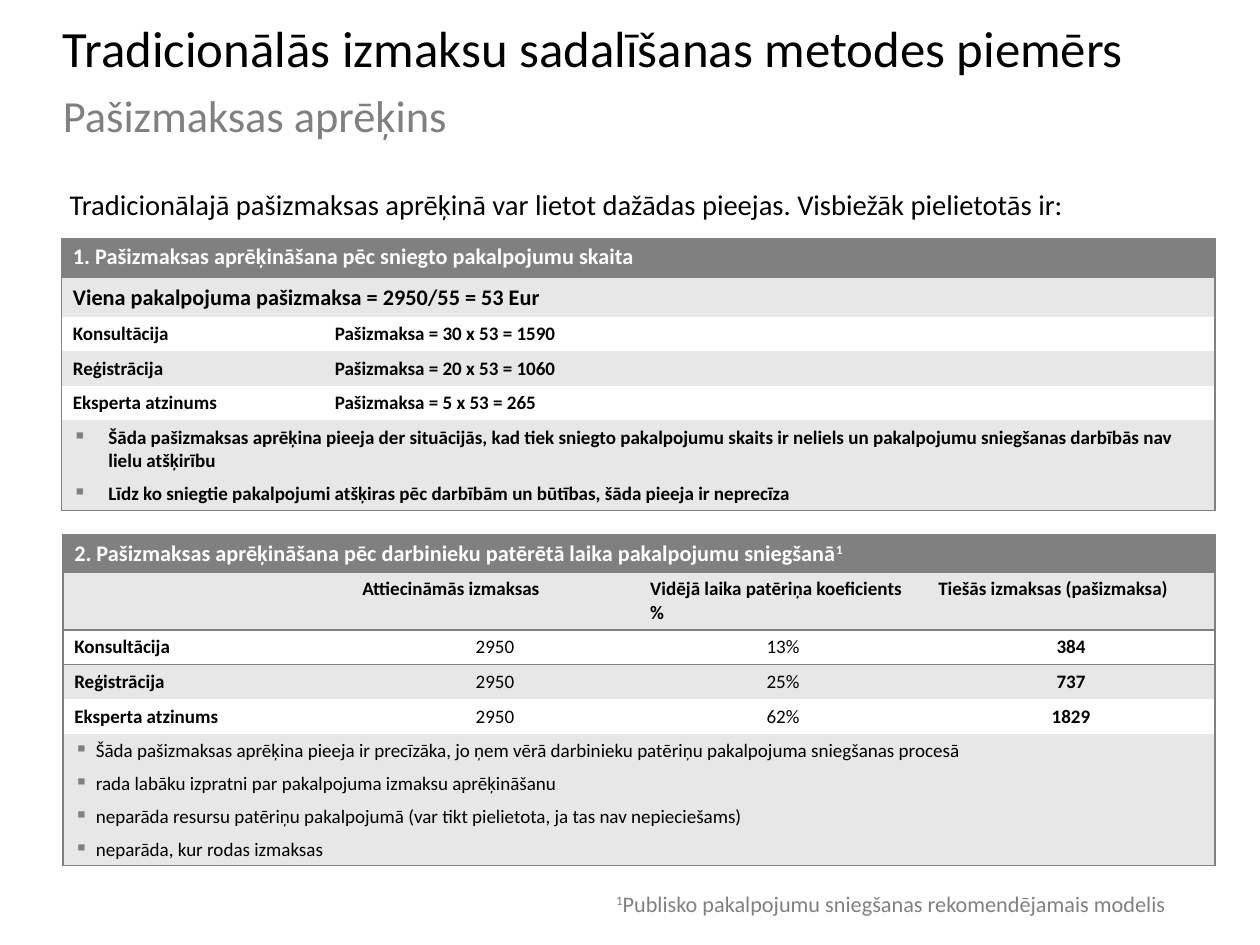
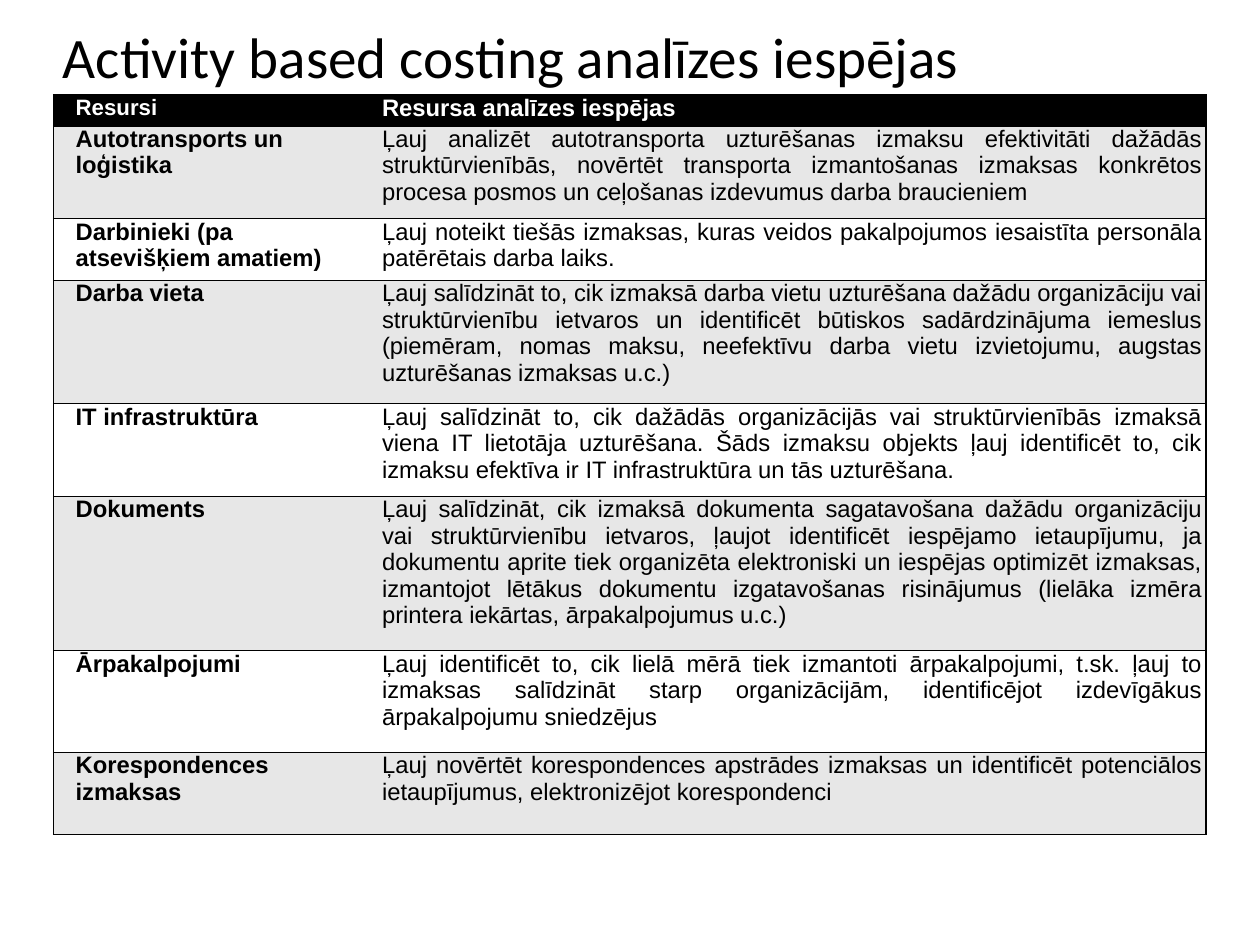
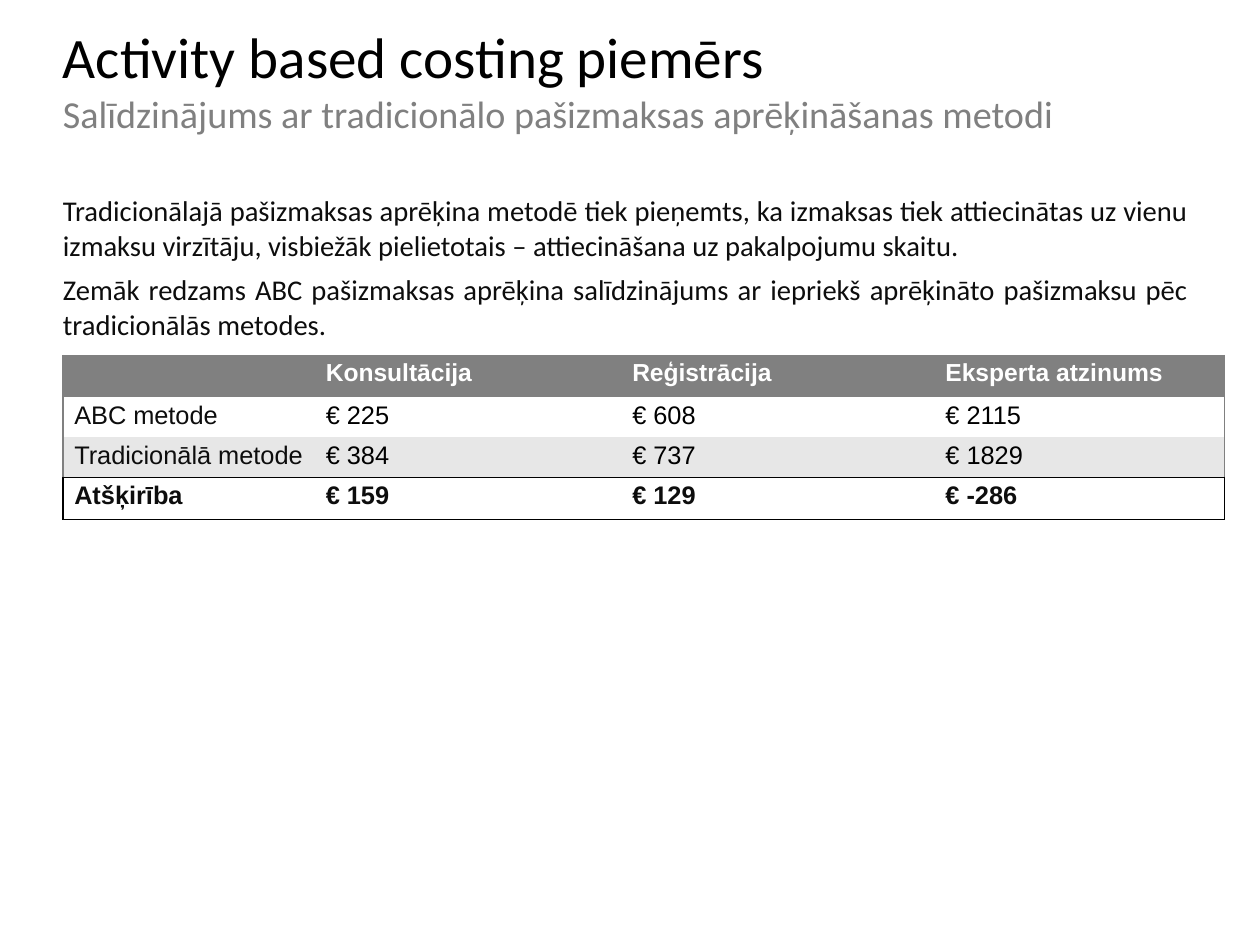
from dataclasses import dataclass, replace

from lxml import etree
from pptx import Presentation
from pptx import util as u
from pptx.dml import color as dml
from pptx.enum import text
from pptx.oxml import ns

COLORS = {
    "black": "000000",
    "ink": "0D0D0D",
    "gray": "808080",
    "band": "E7E7E7",
    "white": "FFFFFF",
}
PLAIN_TABLE = "{2D5ABB26-0587-4C30-8999-92F81FD0307C}"
LEFT = 1.4  # common left edge, cm
INSET = (0.25, 0.13, 0.25, 0.13)  # left, top, right, bottom, cm
NO_INSET = (0, 0, 0, 0)


@dataclass
class Style:
    size: float
    color: str = "black"
    bold: bool = False
    font: str = "Calibri"
    align: str = "LEFT"
    anchor: str = "TOP"
    leading: float = 1.0
    gap: float = 0  # points between paragraphs
    indent: float = 0  # cm
    bullet: str = ""


@dataclass
class Row:
    height: float
    fill: str
    cells: list  # a single cell spans the whole row
    styles: list
    edge: str = "gray"
    top: str = ""
    bottom: str = ""


def rgb(name):
    return dml.RGBColor.from_string(COLORS[name])


# Text
def format_paragraph(para, style):
    properties = para._p.get_or_add_pPr()
    if style.indent:
        properties.set("marL", str(u.Cm(style.indent)))
    if style.bullet:
        properties.set("indent", str(-u.Cm(style.indent)))
        tint = etree.SubElement(properties, ns.qn("a:buClr"))
        etree.SubElement(tint, ns.qn("a:srgbClr"), val=COLORS["gray"])
        etree.SubElement(properties, ns.qn("a:buChar"), char=style.bullet)
    para.alignment = getattr(text.PP_ALIGN, style.align)
    para.line_spacing = style.leading
    for span in para.runs:
        span.font.name = style.font
        span.font.size = u.Pt(style.size)
        span.font.bold = style.bold
        span.font.color.rgb = rgb(style.color)
    if not para.runs:
        etree.SubElement(para._p, ns.qn("a:endParaRPr"), sz=str(int(style.size * 100)))


def write(frame, words, styles):
    """Fill a frame; paragraphs beyond the listed styles use the last one."""
    frame.text = words
    for index, para in enumerate(frame.paragraphs):
        style = styles[min(index, len(styles) - 1)]
        format_paragraph(para, style)
        if index:
            para.space_before = u.Pt(style.gap)


def add_superscript(para, words, style, first=False):
    span = para.add_run()
    span.text = words
    span.font.name = style.font
    span.font.size = u.Pt(style.size)
    span.font.bold = style.bold
    span.font.color.rgb = rgb(style.color)
    span.font._element.set("baseline", "30000")
    if first:
        para.runs[0]._r.addprevious(span._r)


def set_insets(target, insets):
    for side, value in zip(("left", "top", "right", "bottom"), insets):
        setattr(target, "margin_" + side, u.Cm(value))


def add_text(page, place, words, styles, insets=INSET):
    box = page.shapes.add_textbox(*map(u.Cm, place))
    frame = box.text_frame
    frame.word_wrap = True
    frame.vertical_anchor = getattr(text.MSO_ANCHOR, styles[0].anchor)
    set_insets(frame, insets)
    write(frame, words, styles)
    return frame


def add_title(page, title, size, subtitle="", subsize=24, gap=0, top=0):
    heading = Style(size, anchor="MIDDLE", leading=1.01)
    second = replace(heading, size=subsize, color="gray", gap=gap)
    words = f"{title}\n{subtitle}" if subtitle else title
    add_text(page, (LEFT, top, 25.2, 3.5), words, [heading, second], NO_INSET)


# Tables
def set_borders(cell, sides):
    properties = cell._tc.get_or_add_tcPr()
    for side in "LRTB":
        if sides.get(side):
            line = etree.SubElement(properties, ns.qn("a:ln" + side), w=str(u.Pt(1)))
            fill = etree.SubElement(line, ns.qn("a:solidFill"))
            etree.SubElement(fill, ns.qn("a:srgbClr"), val=COLORS[sides[side]])


def add_grid(page, left, top, widths, rows, insets=INSET):
    height = sum(row.height for row in rows)
    place = map(u.Cm, (left, top, sum(widths), height))
    table = page.shapes.add_table(len(rows), len(widths), *place).table
    table.first_row = table.horz_banding = False
    table._tbl.tblPr.find(ns.qn("a:tableStyleId")).text = PLAIN_TABLE
    for column, width in zip(table.columns, widths):
        column.width = u.Cm(width)
    last = len(widths) - 1
    for y, row in enumerate(rows):
        table.rows[y].height = u.Cm(row.height)
        spanned = len(row.cells) == 1
        if spanned:
            table.cell(y, 0).merge(table.cell(y, last))
        for x, (words, style) in enumerate(zip(row.cells, row.styles)):
            cell = table.cell(y, x)
            set_borders(cell, {
                "L": row.edge if x == 0 else "",
                "R": row.edge if spanned or x == last else "",
                "T": row.top,
                "B": row.bottom,
            })
            cell.fill.solid()
            cell.fill.fore_color.rgb = rgb(row.fill)
            cell.vertical_anchor = getattr(text.MSO_ANCHOR, style.anchor)
            set_insets(cell, insets)
            write(cell.text_frame, words, [style])
    return table


def band(index):
    return "band" if index % 2 else "white"


# Slides
def build_traditional(page):
    add_title(page, "Tradicionālās izmaksu sadalīšanas metodes piemērs", 32,
              "Pašizmaksas aprēķins", 28, gap=6.6)
    add_text(page, (1.3, 4.09, 25.4, 0.97),
             "Tradicionālajā pašizmaksas aprēķinā var lietot dažādas pieejas. "
             "Visbiežāk pielietotās ir:", [Style(18, leading=0.93)])

    note = Style(14, "gray", leading=0.93)
    frame = add_text(page, (13.41, 19.69, 14, 0.84),
                     "Publisko pakalpojumu sniegšanas rekomendējamais modelis",
                     [note], (0.28, 0.15, 0.28, 0.15))
    add_superscript(frame.paragraphs[0], "1", note, first=True)

    head = Style(14, "white", True, leading=0.93)
    strong = Style(12, bold=True)
    bullets = Style(12, gap=6, indent=0.48, bullet="▪")
    number = Style(12, align="CENTER", anchor="MIDDLE")
    services = ["Konsultācija", "Reģistrācija", "Eksperta atzinums"]

    # Costing by number of services
    sums = ["30 x 53 = 1590", "20 x 53 = 1060", "5 x 53 = 265"]
    rows = [
        Row(0.87, "gray", ["1. Pašizmaksas aprēķināšana pēc sniegto pakalpojumu skaita"],
            [head], top="gray"),
        Row(0.84, "band", ["Viena pakalpojuma pašizmaksa = 2950/55 = 53 Eur"],
            [replace(strong, size=14)]),
    ]
    for index, (service, total) in enumerate(zip(services, sums)):
        rows.append(Row(0.76, band(index), [service, f"Pašizmaksa = {total}"], [strong] * 2))
    rows.append(Row(
        1.98, "band",
        ["Šāda pašizmaksas aprēķina pieeja der situācijās, kad tiek sniegto pakalpojumu "
         "skaits ir neliels un pakalpojumu sniegšanas darbībās nav lielu atšķirību\n"
         "Līdz ko sniegtie pakalpojumi atšķiras pēc darbībām un būtības, "
         "šāda pieeja ir neprecīza"],
        [replace(bullets, bold=True, indent=0.79)], bottom="gray"))
    add_grid(page, 1.37, 5.31, [5.82, 19.81], rows)

    # Costing by staff time
    figures = [("13%", "384"), ("25%", "737"), ("62%", "1829")]
    rows = [
        Row(0.82, "gray",
            ["2. Pašizmaksas aprēķināšana pēc darbinieku patērētā laika pakalpojumu sniegšanā"],
            [head], top="gray", bottom="gray"),
        Row(1.29, "band",
            ["", "Attiecināmās izmaksas", "Vidējā laika patēriņa koeficients %",
             "Tiešās izmaksas (pašizmaksa)"],
            [strong] * 4, top="gray", bottom="gray"),
    ]
    for index, (service, (share, cost)) in enumerate(zip(services, figures)):
        rows.append(Row(0.76, band(index), [service, "2950", share, cost],
                        [strong, number, number, replace(number, bold=True)],
                        top="" if index else "gray"))
    rows.append(Row(
        2.92, "band",
        ["Šāda pašizmaksas aprēķina pieeja ir precīzāka, jo ņem vērā darbinieku patēriņu "
         "pakalpojuma sniegšanas procesā\n"
         "rada labāku izpratni par pakalpojuma izmaksu aprēķināšanu\n"
         "neparāda resursu patēriņu pakalpojumā (var tikt pielietota, ja tas nav "
         "nepieciešams)\n"
         "neparāda, kur rodas izmaksas"],
        [bullets], bottom="gray"))
    table = add_grid(page, LEFT, 11.89, [6.4] * 4, rows)
    add_superscript(table.cell(0, 0).text_frame.paragraphs[0], "1", head)


def build_options(page):
    resources = [
        (2.06, "Autotransports un loģistika",
         "Ļauj analizēt autotransporta uzturēšanas izmaksu efektivitāti dažādās "
         "struktūrvienībās, novērtēt transporta izmantošanas izmaksas konkrētos procesa "
         "posmos un ceļošanas izdevumus darba braucieniem"),
        (1.37, "Darbinieki (pa atsevišķiem amatiem)",
         "Ļauj noteikt tiešās izmaksas, kuras veidos pakalpojumos iesaistīta personāla "
         "patērētais darba laiks."),
        (2.74, "Darba vieta",
         "Ļauj salīdzināt to, cik izmaksā darba vietu uzturēšana dažādu organizāciju vai "
         "struktūrvienību ietvaros un identificēt būtiskos sadārdzinājuma iemeslus "
         "(piemēram, nomas maksu, neefektīvu darba vietu izvietojumu, augstas uzturēšanas "
         "izmaksas u.c.)"),
        (2.06, "IT infrastruktūra",
         "Ļauj salīdzināt to, cik dažādās organizācijās vai struktūrvienībās izmaksā viena "
         "IT lietotāja uzturēšana. Šāds izmaksu objekts ļauj identificēt to, cik izmaksu "
         "efektīva ir IT infrastruktūra un tās uzturēšana."),
        (3.43, "Dokuments",
         "Ļauj salīdzināt, cik izmaksā dokumenta sagatavošana dažādu organizāciju vai "
         "struktūrvienību ietvaros, ļaujot identificēt iespējamo ietaupījumu, ja dokumentu "
         "aprite tiek organizēta elektroniski un iespējas optimizēt izmaksas, izmantojot "
         "lētākus dokumentu izgatavošanas risinājumus (lielāka izmēra printera iekārtas, "
         "ārpakalpojumus u.c.)"),
        (2.26, "Ārpakalpojumi",
         "Ļauj identificēt to, cik lielā mērā tiek izmantoti ārpakalpojumi, t.sk. ļauj to "
         "izmaksas salīdzināt starp organizācijām, identificējot izdevīgākus ārpakalpojumu "
         "sniedzējus"),
        (1.83, "Korespondences izmaksas",
         "Ļauj novērtēt korespondences apstrādes izmaksas un identificēt potenciālos "
         "ietaupījumus, elektronizējot korespondenci"),
    ]
    name = Style(15, bold=True, font="Arial", indent=0.41)
    detail = replace(name, bold=False, align="JUSTIFY")
    head = replace(name, color="white")
    lines = {"edge": "black", "top": "black", "bottom": "black"}
    rows = [Row(0.69, "black", ["Resursi", "Resursa analīzes iespējas"],
                [replace(head, size=14), head], **lines)]
    for index, (height, resource, options) in enumerate(resources):
        rows.append(Row(height, band(index + 1), [resource, options], [name, detail], **lines))
    add_grid(page, 1.19, 2.11, [6.81, 18.8], rows, (0.08, 0, 0.08, 0))
    add_title(page, "Activity based costing analīzes iespējas", 36, top=-0.51)


def build_comparison(page):
    add_text(page, (LEFT, 4.29, 25, 3.99),
             "Tradicionālajā pašizmaksas aprēķina metodē tiek pieņemts, ka izmaksas tiek "
             "attiecinātas uz vienu izmaksu virzītāju, visbiežāk pielietotais – "
             "attiecināšana uz pakalpojumu skaitu.\n"
             "Zemāk redzams ABC pašizmaksas aprēķina salīdzinājums ar iepriekš aprēķināto "
             "pašizmaksu pēc tradicionālās metodes.",
             [Style(18, "ink", align="JUSTIFY", leading=1.01, gap=6)], NO_INSET)
    add_title(page, "Activity based costing piemērs", 36,
              "Salīdzinājums ar tradicionālo pašizmaksas aprēķināšanas metodi")

    value = Style(16, font="Arial", leading=0.93)
    label = replace(value, color="ink")
    total = replace(label, bold=True)
    head = replace(value, size=15.5, color="white", bold=True)
    rows = [
        Row(0.93, "gray", ["", "Konsultācija", "Reģistrācija", "Eksperta atzinums"],
            [head] * 4, top="gray"),
        Row(0.89, "white", ["ABC metode", "€ 225", "€ 608", "€ 2115"],
            [label] + [value] * 3),
        Row(0.87, "band", ["Tradicionālā metode", "€ 384", "€ 737", "€ 1829"],
            [label] + [value] * 3, bottom="black"),
        Row(0.93, "white", ["Atšķirība", "€ 159", "€ 129", "€ -286"],
            [total] * 4, edge="black", top="black", bottom="black"),
    ]
    add_grid(page, LEFT, 7.9, [5.59, 6.81, 6.96, 6.45], rows)


def main():
    deck = Presentation()
    deck.slide_width, deck.slide_height = u.Cm(28), u.Cm(21)
    for build in (build_traditional, build_options, build_comparison):
        build(deck.slides.add_slide(deck.slide_layouts[6]))
    deck.save("out.pptx")


if __name__ == "__main__":
    main()
